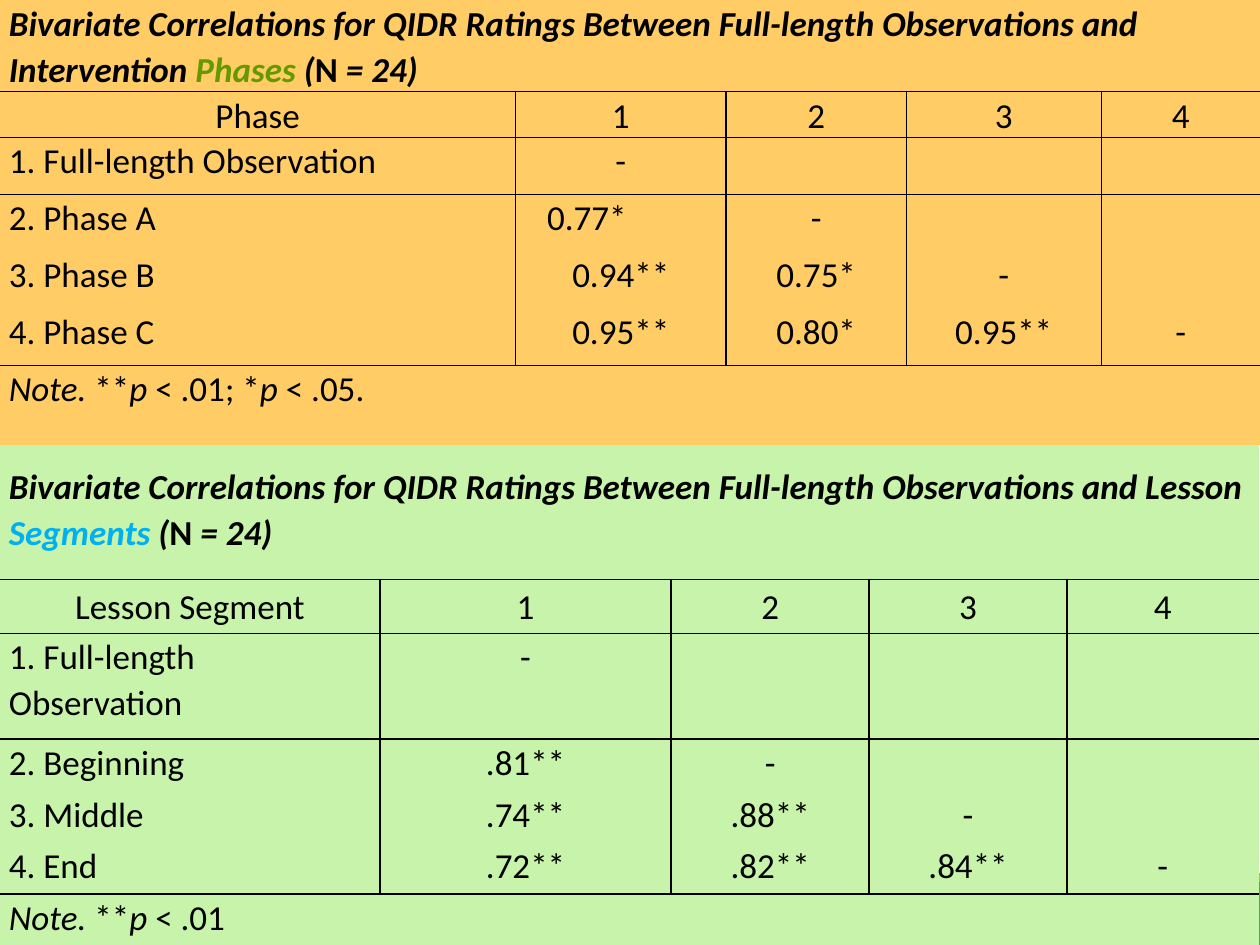
import dataclasses

import pptx
import pptx.dml.color
import pptx.enum.shapes
import pptx.enum.text
import pptx.oxml
import pptx.util
from pptx.util import Cm, Pt

ALIGN = pptx.enum.text.PP_ALIGN
ANCHOR = pptx.enum.text.MSO_ANCHOR
NAMESPACE = "http://schemas.openxmlformats.org/drawingml/2006/main"
NO_STYLE = "{2D5ABB26-0587-4C30-8999-92F81FD0307C}"


@dataclasses.dataclass(frozen=True)
class Theme:
    font: str = "Calibri"
    size: int = 20
    rule_width: int = 1
    text: str = "000000"
    orange: str = "FFCC66"
    mint: str = "C8F3AB"
    olive: str = "669900"
    blue: str = "00B0F0"
    bar: str = "63A537"
    bar_edge: str = "99CB38"


THEME = Theme()


def color(value):
    return pptx.dml.color.RGBColor.from_string(value)


def set_values(target, values):
    for name, value in values.items():
        setattr(target, name, value)


def write_runs(cell, runs, alignment=ALIGN.LEFT, space_after=0):
    """Fill a cell with (text, bold, italic, colour) runs."""
    paragraph = cell.text_frame.paragraphs[0]
    set_values(paragraph, {"alignment": alignment, "line_spacing": 1.07,
                           "space_after": Pt(space_after)})
    for text, bold, italic, text_color in runs:
        run = paragraph.add_run()
        run.text = text
        set_values(run.font, {"name": THEME.font, "size": Pt(THEME.size),
                              "bold": bold, "italic": italic})
        run.font.color.rgb = color(text_color)


def format_cell(cell, fill, sides):
    """Draw the ruled sides (in the order L, R, T, B), then the fill."""
    set_values(cell, {"margin_left": Cm(0.18), "margin_right": Cm(0.18),
                      "margin_top": 0, "margin_bottom": 0})
    properties = cell._tc.get_or_add_tcPr()
    for side in sides:
        properties.append(pptx.oxml.parse_xml(
            f'<a:ln{side} xmlns:a="{NAMESPACE}" w="{Pt(THEME.rule_width)}">'
            f'<a:solidFill><a:srgbClr val="{THEME.text}"/></a:solidFill></a:ln{side}>'))
    cell.fill.solid()
    cell.fill.fore_color.rgb = color(fill)


def ruled_sides(row, column, last_row, last_column):
    """Rules frame the header and body rows and divide their columns."""
    inside = 0 < row < last_row
    rules = {
        "L": inside and column > 0,
        "R": inside and column < last_column,
        "T": row in (1, 2, last_row),
        "B": row in (0, 1, last_row - 1),
    }
    return [side for side, ruled in rules.items() if ruled]


def add_correlation_table(slide, left, top, widths, heights, fill, title, grid, note):
    """Title row, header row, lower triangle of correlations, note row."""
    last_row, last_column = len(heights) - 1, len(widths) - 1
    table = slide.shapes.add_table(len(heights), len(widths), Cm(left), Cm(top),
                                   Cm(sum(widths)), Cm(sum(heights))).table
    set_values(table, {"first_row": False, "horz_banding": False})
    table._tbl.tblPr.find(f"{{{NAMESPACE}}}tableStyleId").text = NO_STYLE
    for column, width in zip(table.columns, widths):
        column.width = Cm(width)
    for row, height in zip(table.rows, heights):
        row.height = Cm(height)

    for row in range(len(heights)):
        for column in range(len(widths)):
            format_cell(table.cell(row, column), fill,
                        ruled_sides(row, column, last_row, last_column))

    # Title and note span all columns
    for row, runs in ((0, title), (last_row, note)):
        table.cell(row, 0).merge(table.cell(row, last_column))
        write_runs(table.cell(row, 0), runs)
    table.cell(0, 0).vertical_anchor = ANCHOR.MIDDLE

    # Header and body
    for row, values in enumerate(grid, start=1):
        for column, value in enumerate(values):
            cell = table.cell(row, column)
            centered = row == 1 or column > 0
            write_runs(cell, [(value, False, False, THEME.text)],
                       ALIGN.CENTER if centered else ALIGN.LEFT, 6)
            if row == 1:
                cell.vertical_anchor = ANCHOR.MIDDLE
    return table


def title_runs(opening, keyword, keyword_color):
    opening = f"Bivariate Correlations for QIDR Ratings Between Full-length Observations and {opening} "
    return [(opening, True, True, THEME.text), (keyword, True, True, keyword_color),
            (" (", True, True, THEME.text), ("N", True, False, THEME.text),
            (" = 24)", True, True, THEME.text)]


def note_runs(*texts):
    """Italic and upright text take turns."""
    return [(text, False, index % 2 == 0, THEME.text) for index, text in enumerate(texts)]


def add_footer_bars(slide, left, top, width):
    edge, height = 0.18, 1.27
    for offset, bar_height, fill in ((edge, height, THEME.bar), (0, edge, THEME.bar_edge)):
        bar = slide.shapes.add_shape(pptx.enum.shapes.MSO_SHAPE.RECTANGLE, Cm(left),
                                     Cm(top + offset), Cm(width), Cm(bar_height))
        bar.shadow.inherit = False
        bar.fill.solid()
        bar.fill.fore_color.rgb = color(fill)
        bar.line.fill.background()


def main():
    presentation = pptx.Presentation()
    set_values(presentation, {"slide_width": Cm(25.4), "slide_height": Cm(19.05)})
    slide = presentation.slides.add_slide(presentation.slide_layouts[6])

    add_footer_bars(slide, 0, 17.6, 25.4)

    # Lesson segments
    add_correlation_table(
        slide, 0, 8.84, [7.66, 5.87, 3.99, 3.99, 3.86],
        [2.84, 1.09, 2.13] + [1.04] * 4, THEME.mint,
        title_runs("Lesson", "Segments", THEME.blue),
        [["Lesson Segment", "1", "2", "3", "4"],
         ["1. Full-length Observation", "-"],
         ["2. Beginning", ".81**", "-"],
         ["3. Middle", ".74**", ".88**", "-"],
         ["4. End", ".72**", ".82**", ".84**", "-"]],
        note_runs("Note. ", "**", "p ", "< .01"))

    # Intervention phases
    phases = add_correlation_table(
        slide, 0, 0, [10.39, 4.25, 3.63, 3.93, 3.2],
        [1.68, 0.81] + [1.15] * 4 + [1.6], THEME.orange,
        title_runs("Intervention", "Phases", THEME.olive),
        [["Phase", "1", "2", "3", "4"],
         ["1. Full-length Observation", "-"],
         ["2. Phase A", "0.77*", "-"],
         ["3. Phase B", "0.94**", "0.75*", "-"],
         ["4. Phase C", "0.95**", "0.80*", "0.95**", "-"]],
        note_runs("Note. ", "**", "p ", "< .01; *", "p ", "< .05."))

    # The Phase A value is indented from the left
    phase_a = phases.cell(3, 1)
    phase_a.text_frame.paragraphs[0].alignment = ALIGN.LEFT
    phase_a.margin_left = Cm(0.64)

    presentation.save("out.pptx")


if __name__ == "__main__":
    main()
